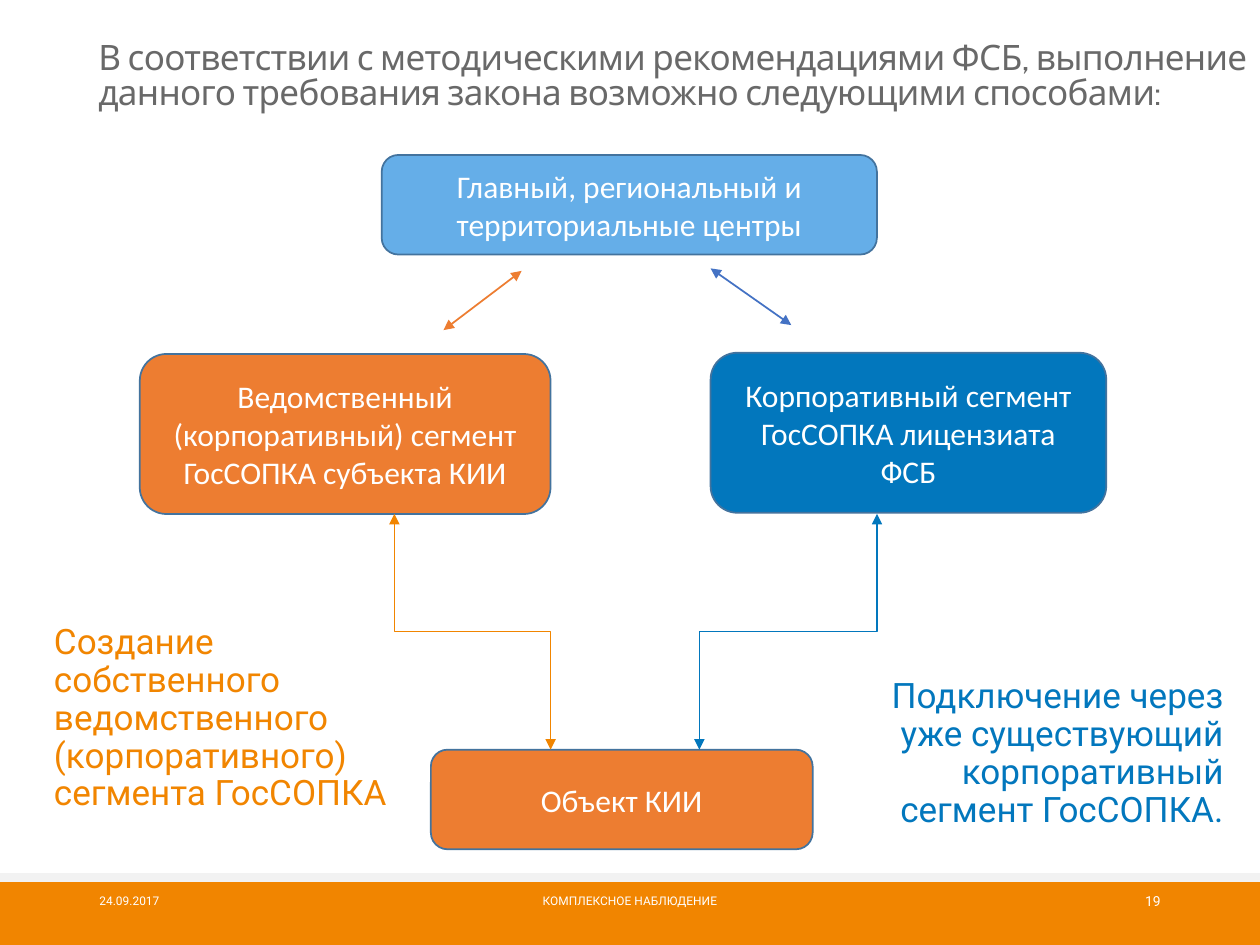
from pptx import Presentation
from pptx.dml.color import RGBColor
from pptx.enum.shapes import MSO_CONNECTOR as Link, MSO_SHAPE as Shape
from pptx.enum.text import MSO_ANCHOR as Anchor, MSO_AUTO_SIZE as AutoSize, PP_ALIGN as Align
from pptx.oxml.ns import qn
from pptx.util import Inches, Pt
from lxml.etree import SubElement

COLORS = {
    "white": "FFFFFF", "band": "F18500", "strip": "F2F2F2", "title": "696969",
    "sky": "65AEE8", "orange": "ED7D31", "blue": "0277BD", "indigo": "4472C4",
    "outline": "43739E",
}


def color(name):
    return RGBColor.from_string(COLORS[name])


def write(box, text, size=18, font="Calibri", ink="white", align=Align.LEFT,
          anchor=Anchor.MIDDLE, spacing=None, tracking=None):
    """Put one formatted paragraph into a shape."""
    frame = box.text_frame
    frame.word_wrap = True
    frame.auto_size = AutoSize.NONE
    frame.vertical_anchor = anchor
    para = frame.paragraphs[0]
    para.alignment = align
    if spacing:
        para.line_spacing = spacing
    span = para.add_run()
    span.text = text
    span.font.size = Pt(size)
    span.font.name = font
    span.font.color.rgb = color(ink)
    if tracking is not None:
        span.font._element.set("spc", str(round(tracking * 100)))


def add_box(page, kind, place, fill, outline=None):
    box = page.shapes.add_shape(kind, *map(Inches, place))
    box.shadow.inherit = False
    box.fill.solid()
    box.fill.fore_color.rgb = color(fill)
    if outline:
        box.line.color.rgb = color(outline)
        box.line.width = Pt(1)
    else:
        box.line.fill.background()
    return box


def add_node(page, text, place, fill):
    box = add_box(page, Shape.ROUNDED_RECTANGLE, place, fill, "outline")
    write(box, text, align=Align.CENTER)


def add_label(page, text, place, **style):
    box = page.shapes.add_textbox(*map(Inches, place))
    write(box, text, font="Roboto", **style)


def add_arrow(page, start, end, ink, width=1, kind=Link.STRAIGHT):
    """Draw a line with an arrowhead at both ends."""
    arrow = page.shapes.add_connector(kind, *map(Inches, (*start, *end)))
    arrow.line.color.rgb = color(ink)
    arrow.line.width = Pt(width)
    outline = arrow.line._get_or_add_ln()
    for tip in ("a:headEnd", "a:tailEnd"):
        SubElement(outline, qn(tip), type="triangle")
    SubElement(arrow._element.spPr, qn("a:effectLst"))
    return arrow


def add_elbow(page, start, end, ink):
    """Draw an elbow that leaves and arrives vertically, by a quarter turn."""
    middle_x, middle_y = (start[0] + end[0]) / 2, (start[1] + end[1]) / 2
    side = 1 if end[0] > start[0] else -1
    turned = [(middle_x + side * (y - middle_y), middle_y - side * (x - middle_x))
              for x, y in (start, end)]
    arrow = add_arrow(page, *turned, ink, width=0.75, kind=Link.ELBOW)
    degrees = 90 if side == 1 else 270
    arrow._element.spPr.find(qn("a:xfrm")).set("rot", str(degrees * 60000))


def add_title(page, text):
    title = page.shapes.title
    title.left, title.top, title.width, title.height = map(Inches, (0.68, 0.28, 9.48, 0.92))
    write(title, text, size=20, font="Cabin", ink="title", anchor=Anchor.TOP,
          spacing=0.85, tracking=-0.4)


def add_footer(page):
    add_box(page, Shape.RECTANGLE, (0, 7, 10, 0.5), "band")
    add_box(page, Shape.RECTANGLE, (0, 6.93, 10, 0.07), "strip")
    for text, left, width, size, align in (
        ("24.09.2017", 0.69, 2.25, 6.8, Align.LEFT),
        ("КОМПЛЕКСНОЕ НАБЛЮДЕНИЕ", 3.31, 3.38, 6.8, Align.CENTER),
        ("19", 7.06, 2.25, 7.9, Align.RIGHT),
    ):
        add_label(page, text, (left, 6.95, width, 0.4), size=size, align=align)


def main():
    deck = Presentation()
    deck.slide_width, deck.slide_height = Inches(10), Inches(7.5)
    page = deck.slides.add_slide(deck.slide_layouts[5])

    add_footer(page)
    add_title(page, "В соответствии с методическими рекомендациями ФСБ, выполнение "
                    "данного требования закона возможно следующими способами:")

    # Centres, segments and the protected object
    for text, place, fill in (
        ("Главный, региональный и территориальные центры", (3.03, 1.23, 3.93, 0.79), "sky"),
        ("Ведомственный (корпоративный) сегмент ГосСОПКА субъекта КИИ",
         (1.11, 2.81, 3.26, 1.27), "orange"),
        ("Корпоративный сегмент ГосСОПКА лицензиата ФСБ", (5.64, 2.8, 3.14, 1.27), "blue"),
        ("Объект КИИ", (3.42, 5.95, 3.03, 0.79), "orange"),
    ):
        add_node(page, text, place, fill)

    # Links between the levels
    add_arrow(page, (3.52, 2.62), (4.14, 2.15), "orange")
    add_arrow(page, (6.28, 2.58), (5.64, 2.13), "indigo")
    add_elbow(page, (4.37, 5.95), (3.13, 4.08), "band")
    add_elbow(page, (5.55, 5.95), (6.96, 4.08), "blue")

    # The two ways to comply
    add_label(page, "Создание собственного ведомственного (корпоративного) сегмента ГосСОПКА",
              (0.33, 4.86, 3.01, 1.69), size=20, ink="band", spacing=0.9)
    add_label(page, "Подключение через уже существующий корпоративный сегмент ГосСОПКА.",
              (6.42, 5.07, 3.39, 1.83), size=20, ink="blue", align=Align.RIGHT, spacing=0.9)

    deck.save("out.pptx")


if __name__ == "__main__":
    main()
